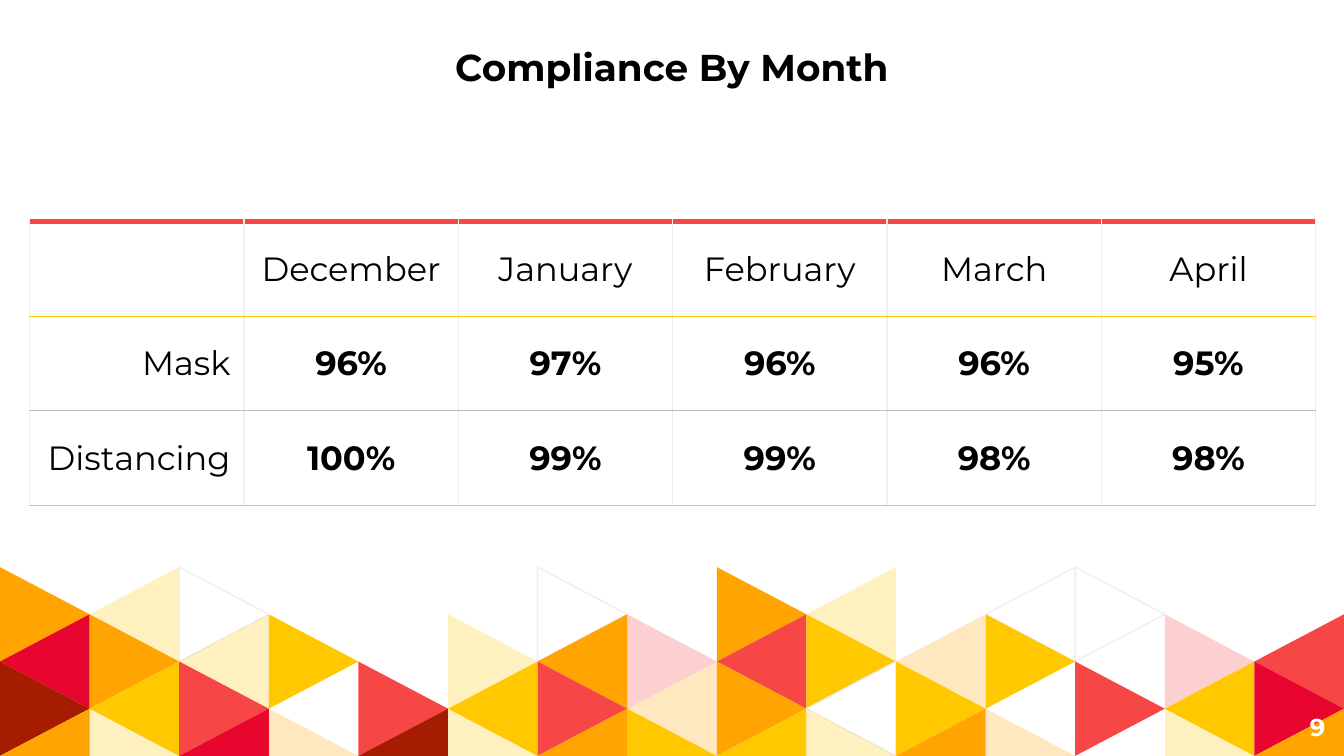
from lxml import etree
from pptx import Presentation
from pptx.dml.color import RGBColor
from pptx.enum import text as t
from pptx.oxml import ns
from pptx.util import Inches, Pt

BLACK = RGBColor(0x00, 0x00, 0x00)
WHITE = RGBColor(0xFF, 0xFF, 0xFF)
PALE = RGBColor(0xEF, 0xEF, 0xEF)
GREY = RGBColor(0xBD, 0xBD, 0xBD)
ORANGE = RGBColor(0xFF, 0xA4, 0x00)
YELLOW = RGBColor(0xFF, 0xC8, 0x00)
RED = RGBColor(0xF6, 0x46, 0x46)
CRIMSON = RGBColor(0xE8, 0x06, 0x2F)
BROWN = RGBColor(0xA6, 0x1C, 0x00)

TITLE = "Compliance By Month"
PAGE = "9"
ROWS = [
    ["", "December", "January", "February", "March", "April"],
    ["Mask", "96%", "97%", "96%", "96%", "95%"],
    ["Distancing", "100%", "99%", "99%", "98%", "98%"],
]
RULES = [(RED, 3), (YELLOW, 0.75), (GREY, 0.75), (YELLOW, 0.75)]

# One word per column, one letter per triangle from the top; lower case is faint.
MOSAIC = ("OCBO yOYy WyRC .Y.o ..RB .yYy WORO .roY "
          "OROY yYWy .oYO WY.o W.R. .rYy .RCO").split()
TONES = {"O": ORANGE, "Y": YELLOW, "R": RED, "C": CRIMSON, "B": BROWN, "W": WHITE}

WIDE = 10
HIGH = WIDE * 9 / 16
TOP = 4.22
STEP_X = WIDE / len(MOSAIC)
STEP_Y = (HIGH - TOP) / 4


def write(frame, words, size=18, color=BLACK, bold=False, align=t.PP_ALIGN.CENTER):
    para = frame.paragraphs[0]
    para.alignment = align
    run = para.add_run()
    run.text = words
    font = run.font
    font.name, font.size, font.bold = "Montserrat", Pt(size), bold
    font.color.rgb = color


def inset(frame, anchor):
    frame.word_wrap = True
    frame.auto_size = t.MSO_AUTO_SIZE.NONE
    frame.vertical_anchor = anchor
    frame.margin_left = frame.margin_right = Inches(0.1)
    frame.margin_top = frame.margin_bottom = Inches(0.1)


def place(shape, *box):
    shape.left, shape.top, shape.width, shape.height = map(Inches, box)


def tile(slide, col, row, code):
    """Draw one triangle; its tip points right where col + row is even."""
    left, right = col * STEP_X, (col + 1) * STEP_X
    if (col + row) % 2:
        base, tip = right, left
    else:
        base, tip = left, right
    y = TOP + row * STEP_Y
    # The lowest row is cut off by the slide edge.
    foot = min(y + 2 * STEP_Y, HIGH)
    pts = [(base, y), (tip, y + STEP_Y), (base, foot)]
    pts = [(Inches(px), Inches(py)) for px, py in pts]
    pen = slide.shapes.build_freeform(*pts[0])
    pen.add_line_segments(pts[1:])
    shape = pen.convert_to_shape()
    shape.shadow.inherit = False
    shape.fill.solid()
    shape.fill.fore_color.rgb = TONES[code.upper()]
    if code.islower():
        tone = shape.element.spPr.find(".//" + ns.qn("a:srgbClr"))
        etree.SubElement(tone, ns.qn("a:alpha"), val="25000")
    if code == "W":
        shape.line.color.rgb = PALE
        shape.line.width = Pt(0.75)
    else:
        shape.line.fill.background()


def edge(cell, side, color, width):
    props = cell._tc.get_or_add_tcPr()
    line = etree.SubElement(props, ns.qn("a:ln" + side), w=str(Pt(width)))
    fill = etree.SubElement(line, ns.qn("a:solidFill"))
    etree.SubElement(fill, ns.qn("a:srgbClr"), val=str(color))


def grid(slide):
    box = map(Inches, (0.22, 1.65, 9.57, 2.11))
    table = slide.shapes.add_table(len(ROWS), len(ROWS[0]), *box).table
    table.first_row = table.horz_banding = False
    for r, row in enumerate(ROWS):
        for c, words in enumerate(row):
            cell = table.cell(r, c)
            cell.vertical_anchor = t.MSO_ANCHOR.MIDDLE
            cell.margin_left = cell.margin_right = Inches(0.1)
            cell.margin_top = cell.margin_bottom = Inches(0.07)
            edge(cell, "L", PALE, 0.75)
            edge(cell, "R", PALE, 0.75)
            edge(cell, "T", *RULES[r])
            edge(cell, "B", *RULES[r + 1])
            cell.fill.background()
            if words:
                align = t.PP_ALIGN.CENTER if c else t.PP_ALIGN.RIGHT
                write(cell.text_frame, words, bold=r > 0 and c > 0, align=align)


def main():
    deck = Presentation()
    deck.slide_width, deck.slide_height = Inches(WIDE), Inches(HIGH)
    slide = deck.slides.add_slide(deck.slide_layouts[5])

    for col, codes in enumerate(MOSAIC):
        for row, code in enumerate(codes):
            if code != ".":
                tile(slide, col, row, code)

    title = slide.shapes.title
    place(title, 0, 0, WIDE, 0.76)
    inset(title.text_frame, t.MSO_ANCHOR.BOTTOM)
    write(title.text_frame, TITLE, size=20, bold=True)

    grid(slide)

    page = slide.shapes.add_textbox(*map(Inches, (9.36, 5.19, 0.6, 0.43)))
    inset(page.text_frame, t.MSO_ANCHOR.MIDDLE)
    write(page.text_frame, PAGE, size=13, color=WHITE, bold=True,
          align=t.PP_ALIGN.RIGHT)

    deck.save("out.pptx")


if __name__ == "__main__":
    main()
